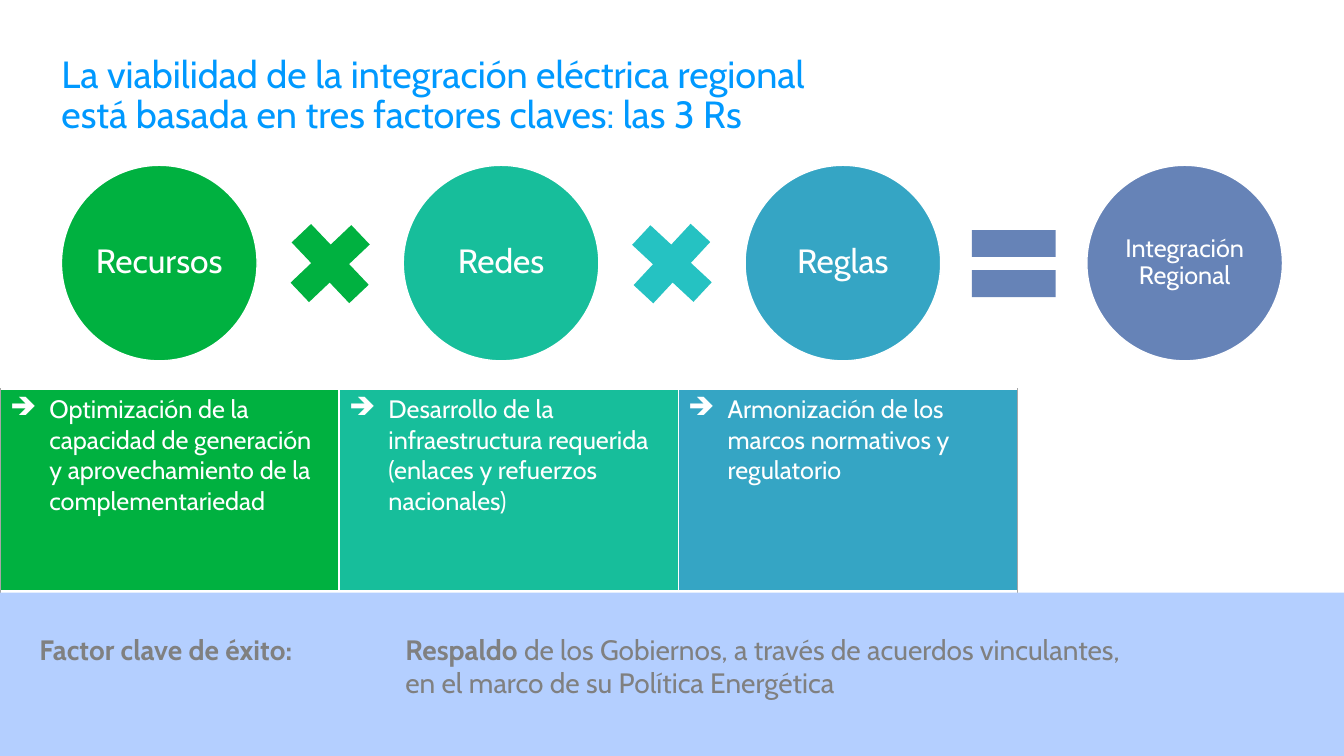
from dataclasses import dataclass

from lxml.etree import SubElement
from pptx import Presentation
from pptx.dml.color import RGBColor
from pptx.enum.shapes import MSO_SHAPE
from pptx.enum.text import MSO_ANCHOR, PP_ALIGN
from pptx.oxml.ns import qn
from pptx.shapes.autoshape import Shape
from pptx.slide import Slide
from pptx.table import _Cell
from pptx.text.text import TextFrame, _Paragraph, _Run
from pptx.util import Inches, Pt


@dataclass(frozen=True)
class Theme:
    font: str = "Cabin"
    white: str = "FFFFFF"
    title: str = "0099FF"
    resources: str = "00B140"
    networks: str = "17BE9B"
    second_times: str = "25C2C2"
    rules: str = "35A5C4"
    integration: str = "6683B7"
    table_edge: str = "A6A6A6"
    band: str = "B4CFFF"
    band_text: str = "808080"
    title_size: int = 27
    factor_size: int = 24
    body_size: int = 18
    band_size: int = 20


@dataclass(frozen=True)
class Term:
    label: str
    color: str
    size: int


@dataclass(frozen=True)
class Operator:
    kind: MSO_SHAPE
    color: str
    rotation: float


@dataclass(frozen=True)
class Detail:
    wording: str
    color: str
    left_edge: str
    right_edge: str


@dataclass(frozen=True)
class Box:
    left: float
    top: float
    width: float
    height: float

    def lengths(self) -> list[int]:
        """Return the box as slide lengths."""
        return [Inches(v) for v in (self.left, self.top, self.width, self.height)]


THEME = Theme()
STEP = 3.39
TERMS = [
    Term("Recursos", THEME.resources, THEME.factor_size),
    Term("Redes", THEME.networks, THEME.factor_size),
    Term("Reglas", THEME.rules, THEME.factor_size),
    Term("Integración Regional", THEME.integration, THEME.body_size),
]
OPERATORS = [
    Operator(MSO_SHAPE.MATH_PLUS, THEME.resources, 316.5),
    Operator(MSO_SHAPE.MATH_PLUS, THEME.second_times, 312.9),
    Operator(MSO_SHAPE.MATH_EQUAL, THEME.integration, 0),
]
DETAILS = [
    Detail("Optimización de la capacidad de generación y aprovechamiento de la complementariedad",
           THEME.resources, THEME.table_edge, THEME.white),
    Detail("Desarrollo de la infraestructura requerida (enlaces y refuerzos nacionales)",
           THEME.networks, THEME.white, THEME.white),
    Detail("Armonización de los marcos normativos y regulatorio",
           THEME.rules, THEME.white, THEME.table_edge),
]
SUCCESS_LINES = [
    [("Factor clave de éxito: \t", True), ("Respaldo", True),
     (" de los Gobiernos, a través de acuerdos vinculantes,", False)],
    [("\ten el marco de su Política Energética", False)],
]


def apply(target: object, values: dict[str, object]) -> None:
    """Set each named attribute on the target."""
    for name, value in values.items():
        setattr(target, name, value)


def set_frame(frame: TextFrame, anchor: MSO_ANCHOR, *insets: float) -> None:
    """Set wrapping, anchor and left, top, right, bottom insets."""
    sides = ("margin_left", "margin_top", "margin_right", "margin_bottom")
    apply(frame, {"word_wrap": True, "vertical_anchor": anchor,
                  **{side: Inches(inset) for side, inset in zip(sides, insets)}})


def style(text: _Paragraph | _Run, size: int, color: str, bold: bool = False) -> None:
    """Apply the theme font to a paragraph or run."""
    apply(text.font, {"name": THEME.font, "size": Pt(size), "bold": bold})
    text.font.color.rgb = RGBColor.from_string(color)


def hang(paragraph: _Paragraph, indent: float) -> None:
    """Give a paragraph a hanging indent."""
    properties = paragraph._p.get_or_add_pPr()
    properties.set("marL", str(Inches(indent)))
    properties.set("indent", str(-Inches(indent)))


def add_filled(slide: Slide, kind: MSO_SHAPE, box: Box, color: str) -> Shape:
    """Draw a plain filled shape without line or shadow."""
    shape = slide.shapes.add_shape(kind, *box.lengths())
    shape.shadow.inherit = False
    shape.fill.solid()
    shape.fill.fore_color.rgb = RGBColor.from_string(color)
    shape.line.fill.background()
    return shape


def add_title(slide: Slide) -> None:
    """Write the two-line heading."""
    heading = slide.shapes.add_textbox(*Box(0.61, 0.18, 8.69, 1.18).lengths()).text_frame
    set_frame(heading, MSO_ANCHOR.BOTTOM, 0, 0, 0, 0)
    line = heading.paragraphs[0]
    line.text = ("La viabilidad de la integración eléctrica regional\v"
                 "está basada en tres factores claves: las 3 Rs")
    line.line_spacing = 0.9
    for run in line.runs:
        style(run, THEME.title_size, THEME.title)


def add_term(slide: Slide, position: int, term: Term) -> None:
    """Draw one labelled circle of the equation."""
    circle = add_filled(slide, MSO_SHAPE.OVAL, Box(0.61 + position * STEP, 1.64, 1.94, 1.94), term.color)
    circle.line.color.rgb = RGBColor.from_string(THEME.white)
    circle.line.width = Pt(1)
    set_frame(circle.text_frame, MSO_ANCHOR.MIDDLE, 0, 0.03, 0, 0.03)
    label = circle.text_frame.paragraphs[0]
    label.text = term.label
    apply(label, {"alignment": PP_ALIGN.CENTER, "line_spacing": 0.9})
    style(label.runs[0], term.size, THEME.white)


def add_operator(slide: Slide, position: int, operator: Operator) -> None:
    """Draw one sign between two circles."""
    sign = add_filled(slide, operator.kind, Box(2.71 + position * STEP, 2.05, 1.13, 1.13), operator.color)
    sign.rotation = operator.rotation


def add_border(cell: _Cell, side: str, color: str, width: float) -> None:
    """Draw one cell border."""
    line = SubElement(cell._tc.get_or_add_tcPr(), qn(f"a:{side}"), w=str(Pt(width)))
    SubElement(SubElement(line, qn("a:solidFill")), qn("a:srgbClr"), val=color)


def fill_detail(cell: _Cell, detail: Detail) -> None:
    """Fill one table cell with its bulleted wording."""
    for side, color, width in (("lnL", detail.left_edge, 1), ("lnR", detail.right_edge, 1),
                               ("lnT", THEME.white, 1), ("lnB", THEME.white, 3)):
        add_border(cell, side, color, width)
    cell.fill.solid()
    cell.fill.fore_color.rgb = RGBColor.from_string(detail.color)
    point = cell.text_frame.paragraphs[0]
    hang(point, 0.39)
    SubElement(point._p.get_or_add_pPr(), qn("a:buChar"), char="➔")
    point.text = detail.wording
    style(point.runs[0], THEME.body_size, THEME.white)


def add_details(slide: Slide) -> None:
    """Draw the table explaining the three factors."""
    table = slide.shapes.add_table(1, len(DETAILS), *Box(0, 3.86, 10.09, 2.01).lengths()).table
    apply(table, {"first_row": False, "horz_banding": False})
    for cell, detail in zip(table.rows[0].cells, DETAILS):
        fill_detail(cell, detail)


def add_success_band(slide: Slide) -> None:
    """Draw the bottom band with the key to success."""
    band = add_filled(slide, MSO_SHAPE.RECTANGLE, Box(0, 5.88, 13.33, 1.62), THEME.band)
    frame = band.text_frame
    set_frame(frame, MSO_ANCHOR.TOP, 0.39, 0.39, 0.08, 0.08)
    for number, pieces in enumerate(SUCCESS_LINES):
        line = frame.add_paragraph() if number else frame.paragraphs[0]
        line.alignment = PP_ALIGN.LEFT
        hang(line, 3.63)
        for wording, bold in pieces:
            run = line.add_run()
            run.text = wording
            style(run, THEME.band_size, THEME.band_text, bold)


def main() -> None:
    """Build and save the slide."""
    deck = Presentation()
    apply(deck, {"slide_width": Inches(13.33), "slide_height": Inches(7.5)})
    slide = deck.slides.add_slide(deck.slide_layouts[6])
    for position, term in enumerate(TERMS):
        add_term(slide, position, term)
    for position, operator in enumerate(OPERATORS):
        add_operator(slide, position, operator)
    add_title(slide)
    add_details(slide)
    add_success_band(slide)
    deck.save("out.pptx")


if __name__ == "__main__":
    main()
